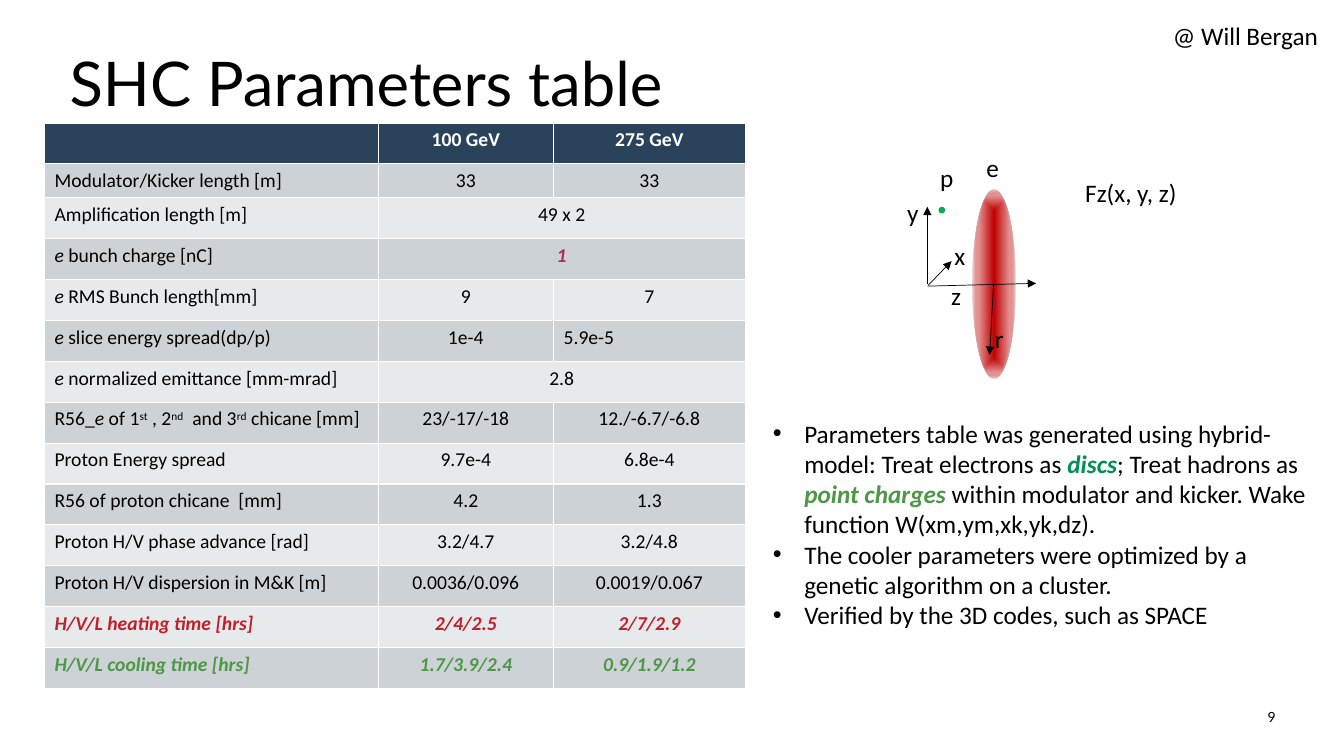
import pptx
import pptx.dml.color
import pptx.enum.shapes
import pptx.enum.text
import pptx.oxml
import pptx.oxml.ns
import pptx.util
from lxml import etree

Cm, Pt = pptx.util.Cm, pptx.util.Pt
ALIGN = pptx.enum.text.PP_ALIGN
ANCHOR = pptx.enum.text.MSO_ANCHOR
SHAPE = pptx.enum.shapes.MSO_SHAPE
qn = pptx.oxml.ns.qn

# Content: rich text is a list of (text, style) pairs
TITLE = "SHC Parameters table"
AUTHOR = "@ Will Bergan"
PAGE = "9"
STYLES = {  # colour, bold, italic, baseline
    "plain": ("000000", False, False, 0),
    "italic": ("000000", False, True, 0),
    "super": ("000000", False, False, 30000),
    "header": ("FFFFFF", True, False, 0),
    "charge": ("B72467", True, True, 0),
    "heating": ("C21F2A", True, True, 0),
    "cooling": ("4D9746", True, True, 0),
    "discs": ("009051", True, True, 0),
}
CHICANE = [("R56_", "plain"), ("e", "italic"), (" of 1", "plain"), ("st", "super"),
           (" , 2", "plain"), ("nd", "super"), ("  and 3", "plain"), ("rd", "super"),
           (" chicane [mm]", "plain")]
ROWS = [  # label, 100 GeV, 275 GeV; None joins the two values
    ("", [("100 GeV", "header")], [("275 GeV", "header")]),
    ("Modulator/Kicker length [m]", "33", "33"),
    ("Amplification length [m]", "49 x 2", None),
    ([("e", "italic"), (" bunch charge [nC]", "plain")], [("1", "charge")], None),
    ([("e ", "italic"), ("RMS Bunch length[mm]", "plain")], "9", "7"),
    ([("e ", "italic"), ("slice energy spread(dp/p)", "plain")], "1e-4", "5.9e-5"),
    ([("e", "italic"), (" normalized emittance [mm-mrad]", "plain")], "2.8", None),
    (CHICANE, "23/-17/-18", "12./-6.7/-6.8"),
    ("Proton Energy spread", "9.7e-4", "6.8e-4"),
    ("R56 of proton chicane  [mm]", "4.2", "1.3"),
    ("Proton H/V phase advance [rad]", "3.2/4.7", "3.2/4.8"),
    ("Proton H/V dispersion in M&K [m]", "0.0036/0.096", "0.0019/0.067"),
    ([("H/V/L heating time [hrs]", "heating")], [("2/4/2.5", "heating")],
     [("2/7/2.9", "heating")]),
    ([("H/V/L cooling time [hrs]", "cooling")], [("1.7/3.9/2.4", "cooling")],
     [("0.9/1.9/1.2", "cooling")]),
]
LEFT_VALUES = {"5.9e-5"}
BULLETS = [
    [("Parameters table was generated using hybrid-model: Treat electrons as ", "plain"),
     ("discs", "discs"), ("; Treat hadrons as ", "plain"), ("point charges ", "cooling"),
     ("within modulator and kicker. Wake function W(xm,ym,xk,yk,dz).", "plain")],
    "The cooler parameters were optimized by a genetic algorithm on a cluster.",
    "Verified by the 3D codes, such as SPACE",
]
COLUMN_WIDTHS = (8.41, 4.42, 4.83)
HEADER_HEIGHT, FIRST_HEIGHT, ROW_HEIGHT = 0.91, 0.84, 1.03
LABEL_HEIGHT = 1.02
DIAGRAM_LABELS = [  # text, left, top, width
    ("e", 24.61, 3.71, 0.84), ("p", 23.44, 3.96, 0.86), ("z", 23.72, 6.93, 0.76),
    ("Fz(x, y, z)", 27.1, 4.34, 2.84), ("x", 23.8, 5.94, 0.79),
    ("y", 22.61, 4.85, 0.81), ("r", 24.82, 8.03, 0.74),
]
ARROWS = [  # from x, from y, to x, to y
    (23.37, 7.21, 26.11, 7.14),
    (23.37, 7.16, 23.37, 5.21),
    (23.39, 7.19, 23.98, 6.58),
    (25.04, 7.14, 24.94, 8.94),
]
BUNCH_GRADIENT = (
    '<a:gradFill xmlns:a="http://schemas.openxmlformats.org/drawingml/2006/main" rotWithShape="1">'
    '<a:gsLst><a:gs pos="0"><a:srgbClr val="C00000"/></a:gs>'
    '<a:gs pos="72000"><a:srgbClr val="E59696"/></a:gs>'
    '<a:gs pos="100000"><a:srgbClr val="C00000"><a:alpha val="11000"/></a:srgbClr></a:gs></a:gsLst>'
    '<a:path path="shape"><a:fillToRect l="50000" t="50000" r="50000" b="50000"/></a:path>'
    '</a:gradFill>')


def color(hex_string):
    return pptx.dml.color.RGBColor.from_string(hex_string)


def write(paragraph, content, size, font="Calibri", align=ALIGN.LEFT):
    paragraph.alignment = align
    pairs = [(content, "plain")] if isinstance(content, str) else content
    for text, style in pairs:
        run = paragraph.add_run()
        run.text = text
        hex_string, bold, italic, baseline = STYLES[style]
        run.font.name, run.font.size = font, Pt(size)
        run.font.bold, run.font.italic = bold, italic
        run.font.color.rgb = color(hex_string)
        if baseline:
            run.font.language_id = None
            run._r.get_or_add_rPr().set("baseline", str(baseline))


def add_label(shapes, text, left, top, width):
    box = shapes.add_textbox(Cm(left), Cm(top), Cm(width), Cm(LABEL_HEIGHT))
    box.text_frame.word_wrap = False
    write(box.text_frame.paragraphs[0], text, 18)


def add_ellipse(shapes, left, top, width, height, line_color, line_width):
    shape = shapes.add_shape(SHAPE.OVAL, Cm(left), Cm(top), Cm(width), Cm(height))
    shape.shadow.inherit = False
    shape.line.color.rgb = color(line_color)
    shape.line.width = Pt(line_width)
    return shape


def add_arrow(shapes, x1, y1, x2, y2):
    arrow = shapes.add_connector(pptx.enum.shapes.MSO_CONNECTOR.STRAIGHT,
                                 Cm(x1), Cm(y1), Cm(x2), Cm(y2))
    arrow.line.color.rgb = color("000000")
    arrow.line.width = Pt(0.5)
    etree.SubElement(arrow.line._get_or_add_ln(), qn("a:tailEnd"), type="triangle")
    etree.SubElement(arrow._element.spPr, qn("a:effectLst"))


def add_parameters(shapes):
    heights = [HEADER_HEIGHT, FIRST_HEIGHT] + [ROW_HEIGHT] * (len(ROWS) - 2)
    table = shapes.add_table(len(ROWS), len(COLUMN_WIDTHS), Cm(1.12), Cm(3.1),
                             Cm(sum(COLUMN_WIDTHS)), Cm(sum(heights))).table
    for column, width in zip(table.columns, COLUMN_WIDTHS):
        column.width = Cm(width)
    for r, (values, height) in enumerate(zip(ROWS, heights)):
        table.rows[r].height = Cm(height)
        fill = "2B425B" if r == 0 else ("E7EAEC", "CCD2D6")[r % 2]
        for c, value in enumerate(values):
            cell = table.cell(r, c)
            cell.fill.solid()
            cell.fill.fore_color.rgb = color(fill)
            if value is None:
                table.cell(r, c - 1).merge(cell)
            elif value:
                left = c == 0 or value in list(LEFT_VALUES)
                write(cell.text_frame.paragraphs[0], value, 14,
                      align=ALIGN.LEFT if left else ALIGN.CENTER)


def add_diagram(shapes):
    bunch = add_ellipse(shapes, 24.51, 4.78, 1.07, 4.75, "BFBFBF", 0.1)
    bunch._element.spPr.find(qn("a:prstGeom")).addnext(pptx.oxml.parse_xml(BUNCH_GRADIENT))
    proton = add_ellipse(shapes, 23.67, 5.23, 0.13, 0.13, "00B050", 1)
    proton.fill.solid()
    proton.fill.fore_color.rgb = color("00B050")
    for label in DIAGRAM_LABELS:
        add_label(shapes, *label)
    for arrow in ARROWS:
        add_arrow(shapes, *arrow)


def add_bullets(shapes):
    box = shapes.add_textbox(Cm(19.23), Cm(10.41), Cm(14.12), Cm(6.4))
    frame = box.text_frame
    frame.word_wrap = True
    for i, content in enumerate(BULLETS):
        paragraph = frame.add_paragraph() if i else frame.paragraphs[0]
        properties = paragraph._p.get_or_add_pPr()
        properties.set("marL", str(Cm(0.79)))
        properties.set("indent", str(-Cm(0.79)))
        etree.SubElement(properties, qn("a:buFont"), typeface="Arial")
        etree.SubElement(properties, qn("a:buChar"), char="•")
        write(paragraph, content, 18)


def main():
    presentation = pptx.Presentation()
    presentation.slide_width, presentation.slide_height = Cm(33.87), Cm(19.05)
    slide = presentation.slides.add_slide(presentation.slide_layouts[5])

    # Title
    title = slide.shapes.title
    title.left, title.top, title.width, title.height = Cm(1.5), Cm(0.33), Cm(21.89), Cm(3.68)
    title.text_frame.vertical_anchor = ANCHOR.MIDDLE
    title.text_frame.paragraphs[0].line_spacing = 0.9
    write(title.text_frame.paragraphs[0], TITLE, 44, "Lato")

    # Body
    add_parameters(slide.shapes)
    add_diagram(slide.shapes.add_group_shape().shapes)
    add_bullets(slide.shapes)
    add_label(slide.shapes, AUTHOR, 29.31, 0.38, 4.22)

    # Page number
    frame = slide.shapes.add_textbox(Cm(31.09), Cm(17.55), Cm(1.19), Cm(1.02)).text_frame
    frame.word_wrap = True
    frame.vertical_anchor = ANCHOR.MIDDLE
    frame.margin_left = frame.margin_top = frame.margin_bottom = 0
    frame.margin_right = Cm(0.13)
    write(frame.paragraphs[0], PAGE, 10, "Lato", ALIGN.RIGHT)

    presentation.save("out.pptx")


if __name__ == "__main__":
    main()
